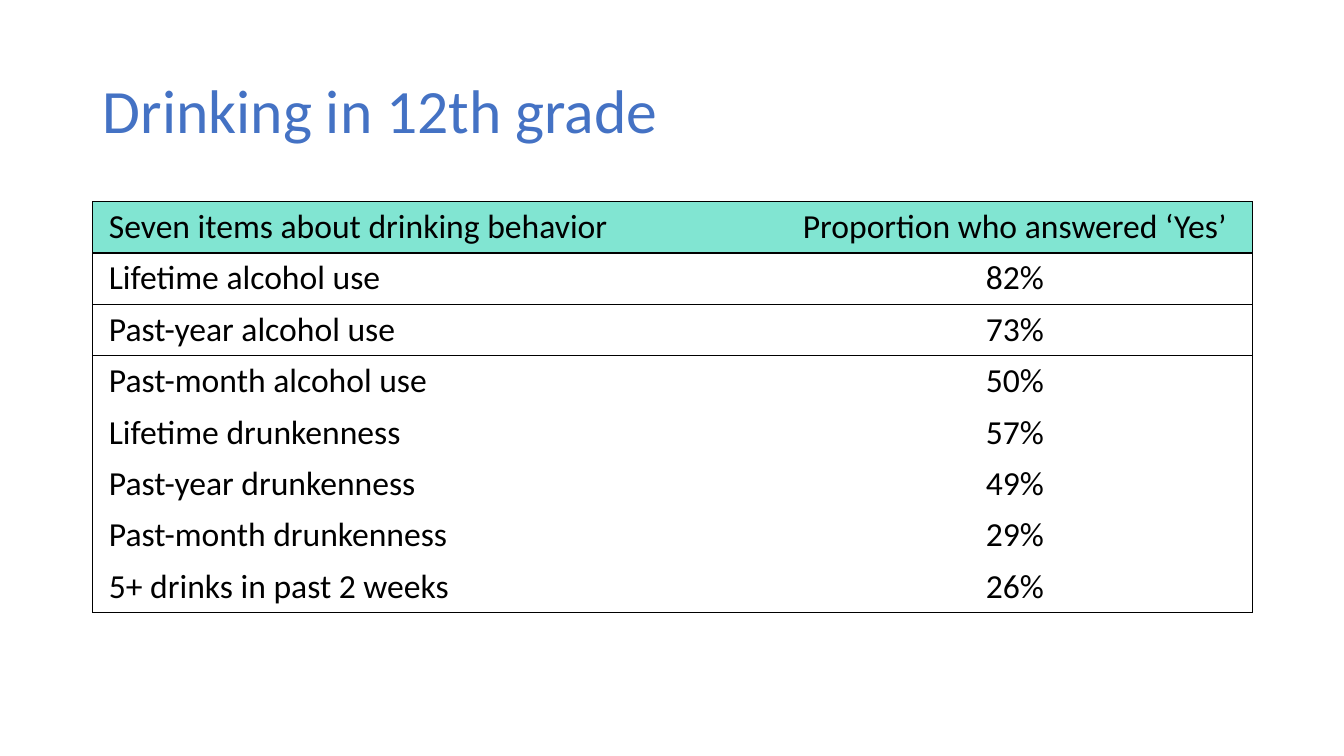
from dataclasses import dataclass

from lxml.etree import SubElement
from pptx import Presentation
from pptx.dml.color import RGBColor
from pptx.enum.text import MSO_ANCHOR, PP_ALIGN
from pptx.oxml.ns import qn
from pptx.util import Pt

PX = 9144
PLAIN_STYLE = "{2D5ABB26-0587-4C30-8999-92F81FD0307C}"


@dataclass(frozen=True)
class Theme:
    """Colours, font and type sizes of the slide."""

    font: str = "Calibri"
    title_color: str = "4472C4"
    text_color: str = "000000"
    header_fill: str = "81E5D2"
    border_color: str = "000000"
    title_size: int = 44
    table_size: int = 24
    border_width: int = 1


THEME = Theme()
TITLE_BOX = (92, 40, 1150, 145)
TABLE_BOX = (92, 200, 1150, 408)
COLUMN_WIDTHS = (679, 471)
ALIGNMENTS = (PP_ALIGN.LEFT, PP_ALIGN.CENTER)
ROWS = (
    ("Seven items about drinking behavior", "Proportion who answered ‘Yes’"),
    ("Lifetime alcohol use", "82%"),
    ("Past-year alcohol use", "73%"),
    ("Past-month alcohol use", "50%"),
    ("Lifetime drunkenness", "57%"),
    ("Past-year drunkenness", "49%"),
    ("Past-month drunkenness", "29%"),
    ("5+ drinks in past 2 weeks", "26%"),
)


def write(para, text, size, color, align):
    """Add one formatted run to a paragraph."""
    para.alignment = align
    span = para.add_run()
    span.text = text
    span.font.name = THEME.font
    span.font.size = Pt(size)
    span.font.color.rgb = RGBColor.from_string(color)


def add_borders(cell, sides):
    """Draw solid borders on the given sides of a cell."""
    properties = cell._tc.get_or_add_tcPr()
    for side in sides:
        line = SubElement(properties, qn(f"a:ln{side}"), w=str(Pt(THEME.border_width)))
        fill = SubElement(line, qn("a:solidFill"))
        SubElement(fill, qn("a:srgbClr"), val=THEME.border_color)


def add_title(page, box, text):
    """Place and format the title placeholder."""
    title = page.shapes.title
    title.left, title.top, title.width, title.height = (length * PX for length in box)
    frame = title.text_frame
    frame.vertical_anchor = MSO_ANCHOR.MIDDLE
    para = frame.paragraphs[0]
    para.line_spacing = 0.9
    write(para, text, THEME.title_size, THEME.title_color, PP_ALIGN.LEFT)


def add_answers_table(page, box, rows):
    """Build the table with an outer frame and rules below its first two rows."""
    left, top, width, height = (length * PX for length in box)
    last_row, last_column = len(rows) - 1, len(COLUMN_WIDTHS) - 1
    frame = page.shapes.add_table(len(rows), len(COLUMN_WIDTHS), left, top, width, height)
    table = frame.table
    table._tbl.tblPr.find(qn("a:tableStyleId")).text = PLAIN_STYLE
    table.horz_banding = False
    for column, column_width in zip(table.columns, COLUMN_WIDTHS):
        column.width = column_width * PX
    for row_index, texts in enumerate(rows):
        for column_index, text in enumerate(texts):
            cell = table.cell(row_index, column_index)
            cell.margin_left = cell.margin_right = 16 * PX
            cell.margin_top = cell.margin_bottom = 5 * PX
            edges = {
                "L": column_index == 0,
                "R": column_index == last_column,
                "T": row_index <= 2,
                "B": row_index in (0, 1, last_row),
            }
            add_borders(cell, [side for side, drawn in edges.items() if drawn])
            if row_index == 0:
                cell.fill.solid()
                cell.fill.fore_color.rgb = RGBColor.from_string(THEME.header_fill)
            else:
                cell.fill.background()
            write(cell.text_frame.paragraphs[0], text, THEME.table_size,
                  THEME.text_color, ALIGNMENTS[column_index])


def main():
    """Build and save the deck."""
    deck = Presentation()
    deck.slide_width, deck.slide_height = 1333 * PX, 750 * PX
    page = deck.slides.add_slide(deck.slide_layouts.get_by_name("Title Only"))
    add_title(page, TITLE_BOX, "Drinking in 12th grade")
    add_answers_table(page, TABLE_BOX, ROWS)
    deck.save("out.pptx")


if __name__ == "__main__":
    main()
